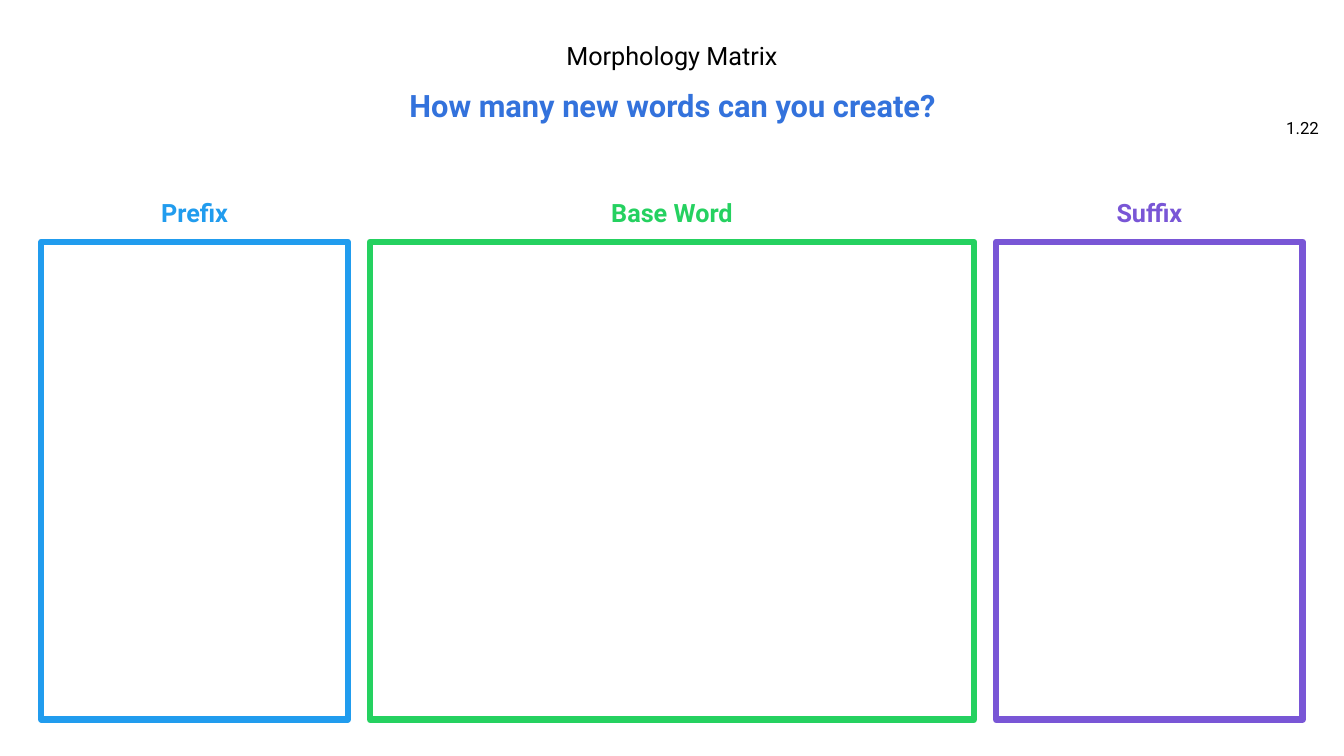
from pptx import Presentation
from pptx.dml.color import RGBColor
from pptx.enum import shapes, text
from pptx.util import Inches, Pt

FONT = "Roboto"
BLACK = "000000"
MARGIN, GAP = 0.41, 0.22
LABEL_TOP, LABEL_HEIGHT = 1.91, 0.4
BOX_TOP, BOX_HEIGHT = 2.4, 4.74

# heading, label width, box width, colour
COLUMNS = [
    ("Prefix", 1.03, 3.04, "219CEE"),
    ("Base Word", 1.66, 5.99, "25D160"),
    ("Suffix", 1.22, 3.04, "7956D6"),
]


def colour(value):
    return RGBColor.from_string(value)


def write(shape, wording, size, hex_colour, bold=False, align=text.PP_ALIGN.CENTER):
    """Fill a shape with one vertically centred line of text."""
    frame = shape.text_frame
    frame.word_wrap = True
    frame.auto_size = text.MSO_AUTO_SIZE.NONE
    frame.vertical_anchor = text.MSO_ANCHOR.MIDDLE
    frame.margin_top = frame.margin_bottom = 0
    paragraph = frame.paragraphs[0]
    paragraph.alignment = align
    paragraph.space_before = Pt(0)
    run = paragraph.add_run()
    run.text = wording
    run.font.name = FONT
    run.font.size = Pt(size)
    run.font.bold = bold
    run.font.color.rgb = colour(hex_colour)


def add_text(slide, left, top, width, height, *content, **style):
    box = slide.shapes.add_textbox(
        Inches(left), Inches(top), Inches(width), Inches(height))
    write(box, *content, **style)


def add_title(slide, left, top, width, height, *content, **style):
    title = slide.shapes.title
    title.left, title.top = Inches(left), Inches(top)
    title.width, title.height = Inches(width), Inches(height)
    write(title, *content, **style)


def add_column(slide, left, heading, label_width, width, hex_colour):
    """Add a coloured heading centred over an empty outlined box."""
    label_left = left + (width - label_width) / 2
    add_text(slide, label_left, LABEL_TOP, label_width, LABEL_HEIGHT,
             heading, 18, hex_colour, bold=True)
    box = slide.shapes.add_shape(
        shapes.MSO_SHAPE.RECTANGLE,
        Inches(left), Inches(BOX_TOP), Inches(width), Inches(BOX_HEIGHT))
    box.shadow.inherit = False
    box.fill.background()
    box.line.color.rgb = colour(hex_colour)
    box.line.width = Pt(4.5)


def main():
    presentation = Presentation()
    presentation.slide_width = Inches(13.33)
    presentation.slide_height = Inches(7.5)
    slide = presentation.slides.add_slide(presentation.slide_layouts[5])

    add_title(slide, 2.09, 0.84, 9.16, 0.4,
              "How many new words can you create?", 22, "3372DC", bold=True)
    add_text(slide, 3.82, 0.37, 5.69, 0.35, "Morphology Matrix", 18, BLACK)
    add_text(slide, 12.55, 1.07, 0.63, 0.4, "1.22", 12, BLACK,
             align=text.PP_ALIGN.RIGHT)

    left = MARGIN
    for heading, label_width, width, hex_colour in COLUMNS:
        add_column(slide, left, heading, label_width, width, hex_colour)
        left += width + GAP

    presentation.save("out.pptx")


if __name__ == "__main__":
    main()
